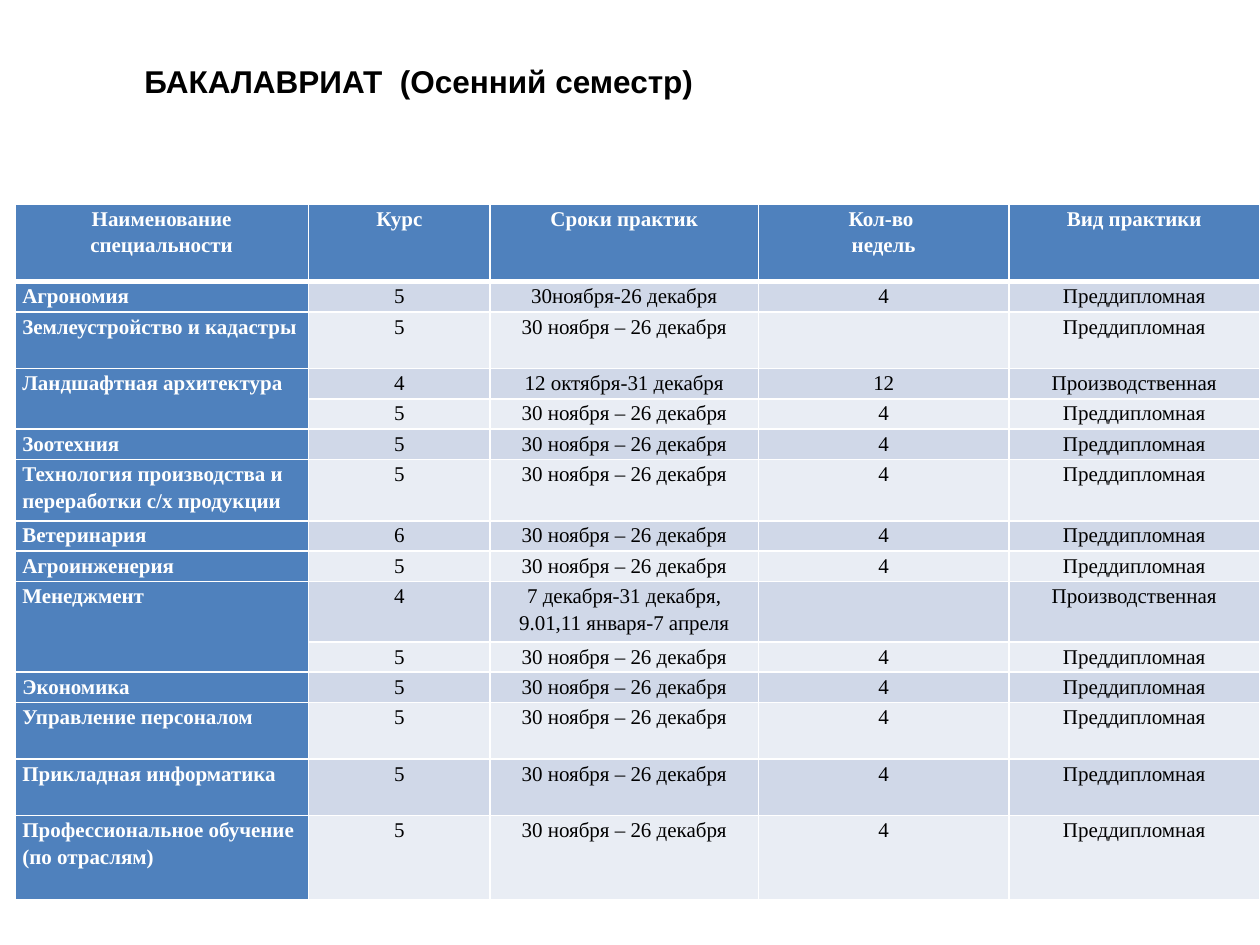
from lxml import etree
from pptx import Presentation
from pptx import util as u
from pptx.dml.color import RGBColor
from pptx.enum import text
from pptx.oxml import ns

BLUE = RGBColor(0x4F, 0x81, 0xBD)
DARK = RGBColor(0xD0, 0xD8, 0xE8)
LIGHT = RGBColor(0xE9, 0xED, 0xF4)
WHITE = RGBColor(0xFF, 0xFF, 0xFF)
BLACK = RGBColor(0, 0, 0)

# Table content: programme, year, dates, weeks, kind of practice
TERM = "30 ноября – 26 декабря"
FINAL = "Преддипломная"
WORK = "Производственная"
HEAD = ("Наименование\nспециальности", "Курс", "Сроки практик",
        "Кол-во \nнедель", "Вид практики")
ROWS = [
    ("Агрономия", "5", "30ноября-26 декабря", "4", FINAL),
    ("Землеустройство и кадастры", "5", TERM, "", FINAL),
    ("Ландшафтная архитектура", "4", "12 октября-31 декабря", "12", WORK),
    ("", "5", TERM, "4", FINAL),
    ("Зоотехния", "5", TERM, "4", FINAL),
    ("Технология производства и переработки с/х продукции",
     "5", TERM, "4", FINAL),
    ("Ветеринария", "6", TERM, "4", FINAL),
    ("Агроинженерия", "5", TERM, "4", FINAL),
    ("Менеджмент", "4", "7 декабря-31 декабря,\n9.01,11 января-7 апреля",
     "", WORK),
    ("", "5", TERM, "4", FINAL),
    ("Экономика", "5", TERM, "4", FINAL),
    ("Управление персоналом", "5", TERM, "4", FINAL),
    ("Прикладная информатика", "5", TERM, "4", FINAL),
    ("Профессиональное обучение\n(по отраслям)", "5", TERM, "4", FINAL),
]
WIDTHS = (5.92, 3.66, 5.41, 5.05, 5.05)
LOW = 0.61
TALL = {0: 1.57, 2: 1.14, 6: 1.24, 9: 1.22, 12: 1.14, 13: 1.14, 14: 1.7}


class Page:
    """Holds the style and the current slide."""
    body = "Times New Roman"
    size = u.Pt(12)

    def __init__(self, deck):
        self.slide = deck.slides.add_slide(deck.slide_layouts[5])

    def title(self, words, left, top, width, height):
        box = self.slide.shapes.title
        box.left, box.top = u.Cm(left), u.Cm(top)
        box.width, box.height = u.Cm(width), u.Cm(height)
        frame = box.text_frame
        frame.text = words
        frame.word_wrap = True
        frame.vertical_anchor = text.MSO_ANCHOR.MIDDLE
        para = frame.paragraphs[0]
        para.alignment = text.PP_ALIGN.CENTER
        self.font(para, "Arial", u.Pt(18), BLACK, True)

    def font(self, para, name, size, color, bold):
        for run in para.runs:
            run.font.name, run.font.size = name, size
            run.font.color.rgb, run.font.bold = color, bold

    def edges(self, cell, row):
        thick = {0: "lnB", 1: "lnT"}.get(row)
        props = cell._tc.get_or_add_tcPr()
        for tag in ("lnL", "lnR", "lnT", "lnB"):
            width = u.Pt(3 if tag == thick else 1)
            line = etree.SubElement(props, ns.qn("a:" + tag), w=str(width))
            fill = etree.SubElement(line, ns.qn("a:solidFill"))
            etree.SubElement(fill, ns.qn("a:srgbClr"), val=str(WHITE))

    def cell(self, cell, words, row, col):
        strong = row == 0 or col == 0
        cell.margin_left = cell.margin_right = u.Cm(0.15)
        cell.margin_top = cell.margin_bottom = 0
        self.edges(cell, row)
        cell.fill.solid()
        band = DARK if row % 2 else LIGHT
        cell.fill.fore_color.rgb = BLUE if strong else band
        cell.text_frame.text = words
        for para in cell.text_frame.paragraphs:
            para.line_spacing = 1.15
            left = col == 0 and row > 0
            para.alignment = (text.PP_ALIGN.LEFT if left
                              else text.PP_ALIGN.CENTER)
            self.font(para, self.body, self.size,
                      WHITE if strong else BLACK, strong)
            if not para.runs:  # keeps blank cells as low as the others
                end = etree.SubElement(para._p, ns.qn("a:endParaRPr"))
                end.set("sz", "1200")

    def table(self, data, left, top):
        highs = [TALL.get(row, LOW) for row in range(len(data))]
        grid = self.slide.shapes.add_table(
            len(data), len(WIDTHS), u.Cm(left), u.Cm(top),
            u.Cm(sum(WIDTHS)), u.Cm(sum(highs))).table
        grid.horz_banding = False
        for col, width in zip(grid.columns, WIDTHS):
            col.width = u.Cm(width)
        for row, high in zip(grid.rows, highs):
            row.height = u.Cm(high)
        for row, line in enumerate(data):
            for col, words in enumerate(line):
                self.cell(grid.cell(row, col), words, row, col)
        # A row without a programme name belongs to the one above
        for row, line in enumerate(data):
            if not line[0]:
                grid.cell(row - 1, 0).merge(grid.cell(row, 0))


def main():
    deck = Presentation()
    deck.slide_width, deck.slide_height = u.Cm(25.4), u.Cm(19.05)
    page = Page(deck)
    # Heading
    page.title("БАКАЛАВРИАТ  (Осенний семестр)", 1.5, 1.12, 13.89, 1.02)
    # Schedule of practice
    page.table([HEAD] + ROWS, 0.3, 4.11)
    deck.save("out.pptx")


if __name__ == "__main__":
    main()
